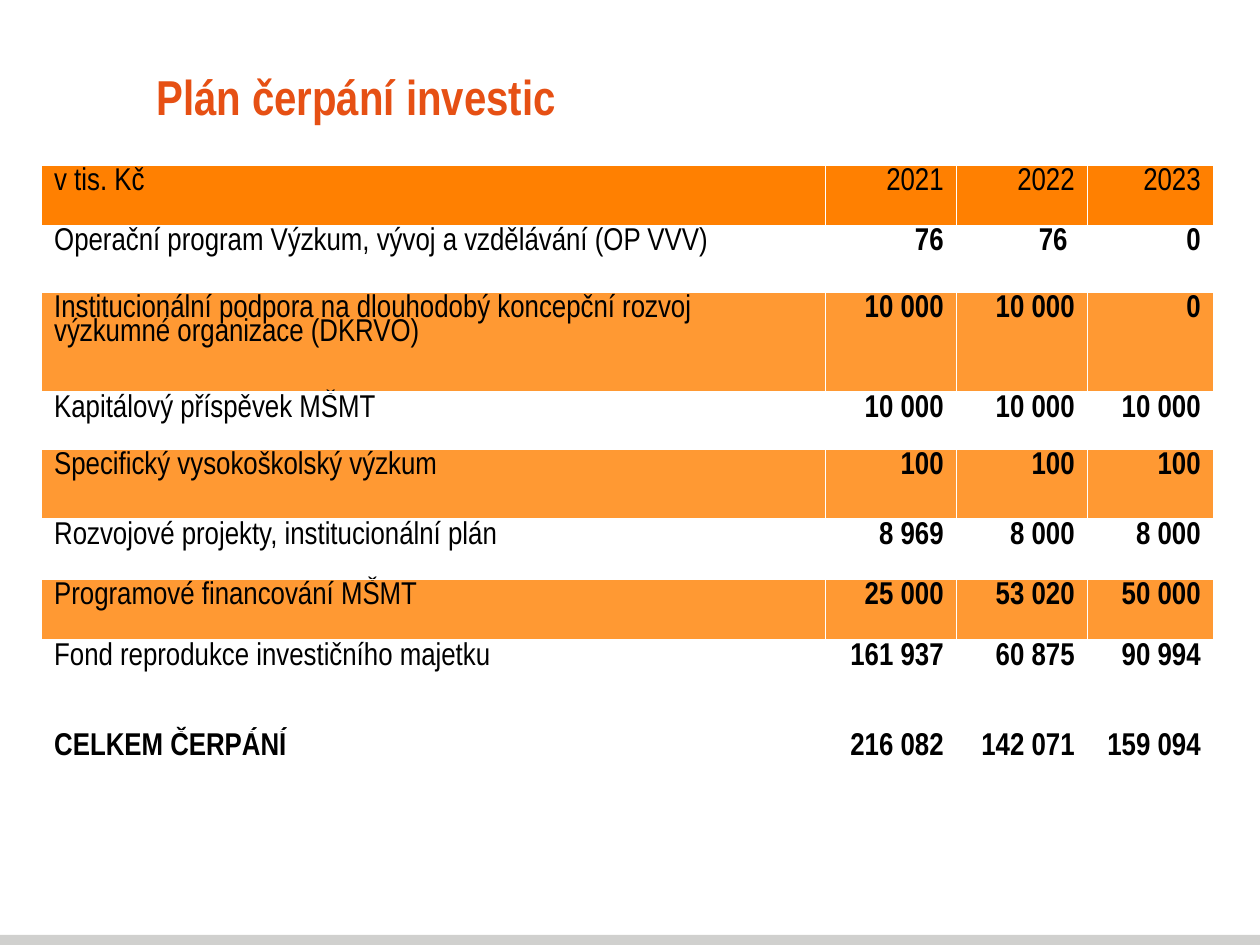
from pptx import Presentation
from pptx.dml.color import RGBColor
from pptx.enum.shapes import MSO_SHAPE
from pptx.enum.text import MSO_ANCHOR, PP_ALIGN
from pptx.util import Inches, Pt

RECTANGLE = MSO_SHAPE.RECTANGLE
MIDDLE = MSO_ANCHOR.MIDDLE
LEFT, RIGHT = PP_ALIGN.LEFT, PP_ALIGN.RIGHT
TITLE_ONLY = 5
FONT = "Arial Narrow"

COLUMN_WIDTHS = [6.22, 1.04, 1.04, 1]
ROW_HEIGHTS = [0.48, 0.53, 0.79, 0.46, 0.55, 0.48, 0.48, 0.72, 0.48]
ROWS = [
    ["v tis. Kč", "2021", "2022", "2023"],
    ["Operační program Výzkum, vývoj a vzdělávání (OP VVV)", "76", "76 ", "0"],
    ["Institucionální podpora na dlouhodobý koncepční rozvoj výzkumné organizace (DKRVO)",
     "10 000", "10 000", "0"],
    ["Kapitálový příspěvek MŠMT", "10 000", "10 000", "10 000"],
    ["Specifický vysokoškolský výzkum", "100", "100", "100"],
    ["Rozvojové projekty, institucionální plán", "8 969", "8 000", "8 000"],
    ["Programové financování MŠMT", "25 000", "53 020", "50 000"],
    ["Fond reprodukce investičního majetku", "161 937", "60 875", "90 994"],
    ["CELKEM ČERPÁNÍ", "216 082", "142 071", "159 094"],
]


def color(value):
    return RGBColor.from_string(value)


def format_paragraph(paragraph, size, text_color, bold, alignment):
    paragraph.alignment = alignment
    paragraph.font.name = FONT
    paragraph.font.size = Pt(size)
    paragraph.font.bold = bold
    paragraph.font.color.rgb = color(text_color)


presentation = Presentation()
presentation.slide_width = Inches(10)
presentation.slide_height = Inches(7.5)
slide = presentation.slides.add_slide(presentation.slide_layouts[TITLE_ONLY])

# Footer bar
bar = slide.shapes.add_shape(RECTANGLE, Inches(0), Inches(7.42), Inches(10), Inches(0.08))
bar.shadow.inherit = False
bar.fill.solid()
bar.fill.fore_color.rgb = color("D0D0CE")
bar.line.fill.background()

# Title
title = slide.shapes.title
title.left, title.top = Inches(1.14), Inches(0.36)
title.width, title.height = Inches(8.11), Inches(0.81)
title.text_frame.text = "Plán čerpání investic"
title.text_frame.vertical_anchor = MIDDLE
format_paragraph(title.text_frame.paragraphs[0], 28, "E65014", True, LEFT)

# Investment table; its default style supplies the white borders
table = slide.shapes.add_table(
    len(ROWS), len(COLUMN_WIDTHS), Inches(0.33), Inches(1.31),
    Inches(sum(COLUMN_WIDTHS)), Inches(sum(ROW_HEIGHTS))).table
for column, width in zip(table.columns, COLUMN_WIDTHS):
    column.width = Inches(width)

last_row = len(ROWS) - 1
for row_index, values in enumerate(ROWS):
    table.rows[row_index].height = Inches(ROW_HEIGHTS[row_index])
    if row_index == 0:
        fill_color = "FF8001"
    else:
        fill_color = "FFFFFF" if row_index % 2 or row_index == last_row else "FF9933"
    for column_index, value in enumerate(values):
        cell = table.cell(row_index, column_index)
        cell.fill.solid()
        cell.fill.fore_color.rgb = color(fill_color)
        cell.text = value
        paragraph = cell.text_frame.paragraphs[0]
        paragraph.line_spacing = 0.8
        bold = row_index == last_row or (row_index > 0 and column_index > 0)
        format_paragraph(paragraph, 18, "000000", bold, RIGHT if column_index else LEFT)

presentation.save("out.pptx")
